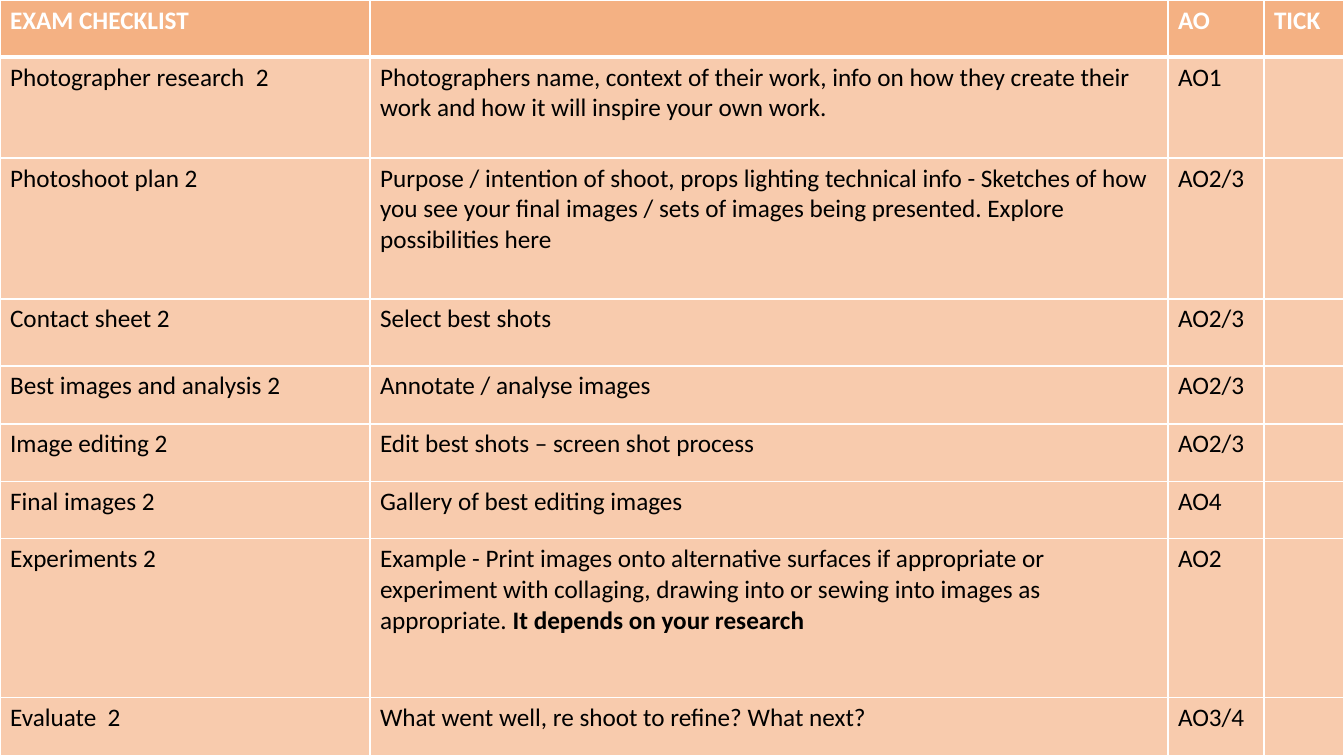
"""Build the exam checklist slide as one full-slide table."""
from lxml.etree import SubElement
from pptx import Presentation
from pptx.dml.color import RGBColor as Rgb
from pptx.oxml.ns import qn
from pptx.util import Pt

PX = 914400 / 100.8
HUES = {"head": "F4B183", "body": "F8CBAD", "line": "FFFFFF", "text": "000000"}
WIDTHS = [370, 798, 96, 80]
HEIGHTS = [57, 101, 141, 67, 58, 58, 57, 159, 58]
ROWS = [
    ("EXAM CHECKLIST", "", "AO", "TICK"),
    ("Photographer research  2",
     "Photographers name, context of their work, info on how they create their "
     "work and how it will inspire your own work.", "AO1", ""),
    ("Photoshoot plan 2",
     "Purpose / intention of shoot, props lighting technical info - Sketches of how "
     "you see your final images / sets of images being presented. Explore "
     "possibilities here", "AO2/3", ""),
    ("Contact sheet 2", "Select best shots", "AO2/3", ""),
    ("Best images and analysis 2", "Annotate / analyse images", "AO2/3", ""),
    ("Image editing 2", "Edit best shots – screen shot process", "AO2/3", ""),
    ("Final images 2", "Gallery of best editing images", "AO4", ""),
    ("Experiments 2",
     "Example - Print images onto alternative surfaces if appropriate or "
     "experiment with collaging, drawing into or sewing into images as "
     "appropriate. ", "AO2", ""),
    ("Evaluate  2", "What went well, re shoot to refine? What next?", "AO3/4", ""),
]


def px(n):
    return round(n * PX)


def write(cell, text, hue="text", bold=False, size=18):
    run = cell.text_frame.paragraphs[0].add_run()
    run.text = text
    font = run.font
    font.name, font.size, font.bold = "Calibri", Pt(size), bold
    font.color.rgb = Rgb.from_string(HUES[hue])


deck = Presentation()
deck.slide_width, deck.slide_height = px(1344), px(756)
slide = deck.slides.add_slide(deck.slide_layouts[6])
frame = slide.shapes.add_table(len(ROWS), len(WIDTHS), 0, 0, px(1344), px(756))
table = frame.table
for col, width in zip(table.columns, WIDTHS):
    col.width = px(width)
for row, height in zip(table.rows, HEIGHTS):
    row.height = px(height)

for r, texts in enumerate(ROWS):
    head = r == 0
    for c, text in enumerate(texts):
        cell = table.cell(r, c)
        props = cell._tc.get_or_add_tcPr()
        for side in "LRTB":
            thick = (r, side) in [(0, "B"), (1, "T")]
            line = SubElement(props, qn(f"a:ln{side}"), w=str(Pt(3 if thick else 1)))
            paint = SubElement(line, qn("a:solidFill"))
            SubElement(paint, qn("a:srgbClr"), val=HUES["line"])
        cell.fill.solid()
        cell.fill.fore_color.rgb = Rgb.from_string(HUES["head" if head else "body"])
        if text:
            write(cell, text, hue="line" if head else "text", bold=head)

write(table.cell(7, 1), "It depends on your research", bold=True)
deck.save("out.pptx")
